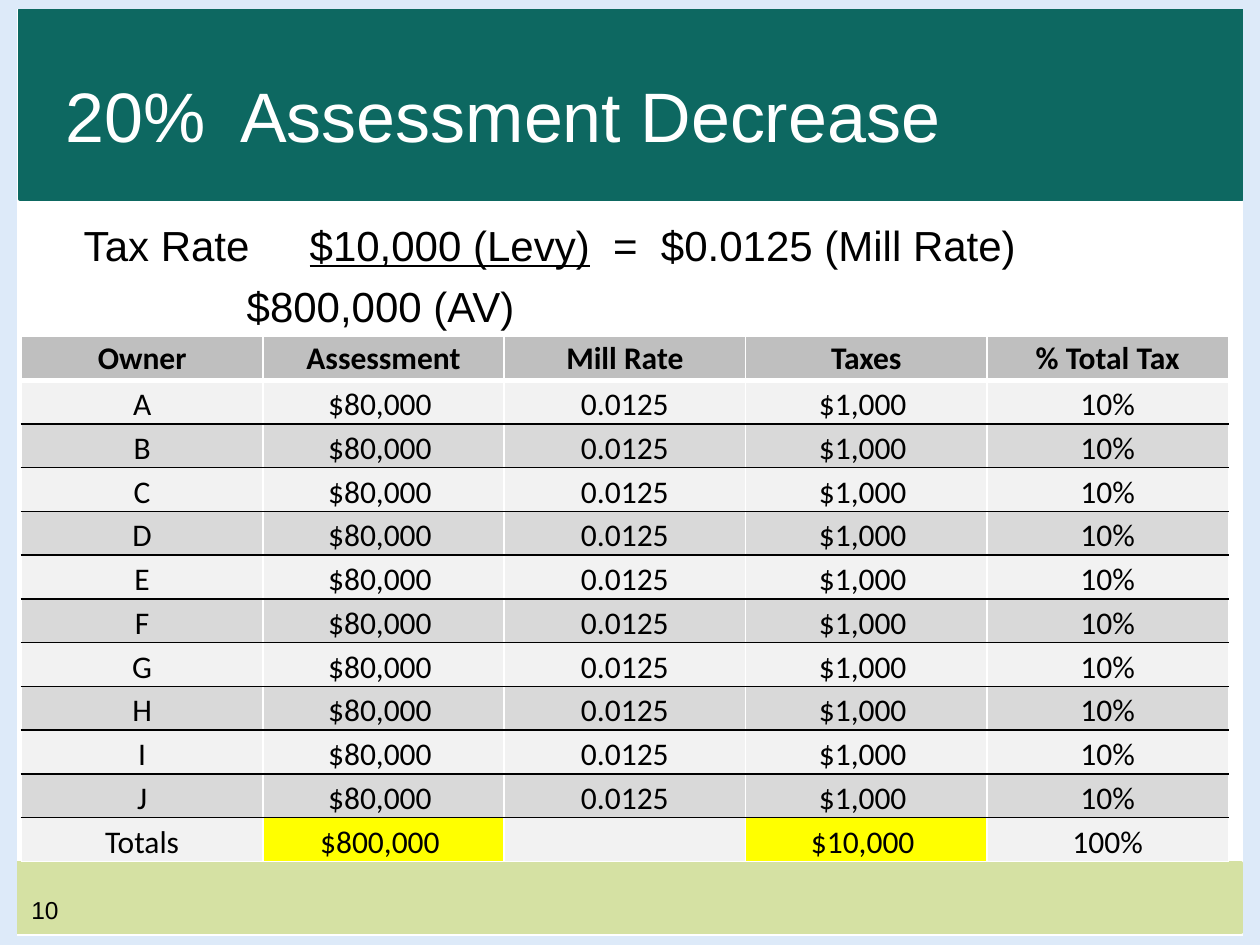
from lxml import etree
from pptx import Presentation
from pptx.dml.color import RGBColor
from pptx.enum.shapes import MSO_SHAPE
from pptx.enum.text import MSO_ANCHOR, PP_ALIGN
from pptx.oxml import parse_xml
from pptx.oxml.ns import nsdecls
from pptx.util import Inches, Pt

RECT = MSO_SHAPE.RECTANGLE
TOP, MIDDLE, BOTTOM = MSO_ANCHOR.TOP, MSO_ANCHOR.MIDDLE, MSO_ANCHOR.BOTTOM
CENTER = PP_ALIGN.CENTER

BLACK = RGBColor(0x00, 0x00, 0x00)
WHITE = RGBColor(0xFF, 0xFF, 0xFF)
TEAL = RGBColor(0x0D, 0x68, 0x61)
LIME = RGBColor(0xD5, 0xE1, 0xA3)
PALE_BLUE = RGBColor(0xDD, 0xEA, 0xF9)
HEADER_GRAY = RGBColor(0xBF, 0xBF, 0xBF)
LIGHT_GRAY = RGBColor(0xF2, 0xF2, 0xF2)
MID_GRAY = RGBColor(0xD9, 0xD9, 0xD9)
YELLOW = RGBColor(0xFF, 0xFF, 0x00)

BANDS = [
    (0.12, 6.85, 9.73, 0.55, LIME),
    (0.16, 0.08, 9.7, 1.5, TEAL),
    (0, 0, 10, 0.06, PALE_BLUE),
    (0, 0.06, 0.12, 7.41, PALE_BLUE),
    (9.88, 0.03, 0.12, 7.41, PALE_BLUE),
    (0, 7.44, 10, 0.06, PALE_BLUE),
]
HEADER = ["Owner", "Assessment", "Mill Rate", "Taxes", "% Total Tax"]
ROWS = [
    HEADER,
    *([owner, "$80,000 ", "0.0125", "$1,000 ", "10%"] for owner in "ABCDEFGHIJ"),
    ["Totals", "$800,000 ", "", "$10,000 ", "100%"],
]
TOTAL_COLUMNS = (1, 3)


def add_band(slide, left, top, width, height, color):
    sp = slide.shapes.add_shape(RECT, Inches(left), Inches(top), Inches(width), Inches(height))
    sp.shadow.inherit = False
    sp.fill.solid()
    sp.fill.fore_color.rgb = color
    sp.line.color.rgb = color
    sp.line.width = Pt(2)


def add_run(p, text, *, size, color=BLACK, font="Arial", bold=False, underline=False):
    r = p.add_run()
    r.text = text
    r.font.size = Pt(size)
    r.font.name = font
    r.font.bold = bold
    r.font.underline = underline
    r.font.color.rgb = color
    return r


def add_text_box(slide, left, top, width, height, anchor=TOP):
    box = slide.shapes.add_textbox(Inches(left), Inches(top), Inches(width), Inches(height))
    tf = box.text_frame
    tf.word_wrap = True
    tf.vertical_anchor = anchor
    return tf


def add_text_shadow(r):
    effects = parse_xml(
        f'<a:effectLst {nsdecls("a")}><a:outerShdw blurRad="38100" dist="38100" dir="2700000">'
        '<a:srgbClr val="000000"><a:alpha val="43000"/></a:srgbClr>'
        '</a:outerShdw></a:effectLst>')
    r.font.fill._xPr.find("{*}solidFill").addnext(effects)


def add_formula(slide):
    """Levy over assessed value, lined up on the default tab stops."""
    tf = add_text_box(slide, 0.48, 1.69, 9, 1)
    levy, value = tf.paragraphs[0], tf.add_paragraph()
    for p in (levy, value):
        p_pr = p._p.get_or_add_pPr()
        p_pr.set("marL", str(Inches(0.38)))
        p_pr.set("indent", str(-Inches(0.38)))
    value.space_before = Pt(6)
    add_run(levy, " Tax Rate\t", size=24)
    add_run(levy, "$10,000 (Levy)", size=24, underline=True)
    add_run(levy, "  =  $0.0125 (Mill Rate)", size=24)
    add_run(value, " \t\t\t$800,000 (AV)", size=24)


def set_borders(cell, top, bottom):
    """Top and bottom are (color, points); the sides are thin white lines."""
    tc_pr = cell._tc.get_or_add_tcPr()
    side = (WHITE, 1)
    edges = [("lnL", side), ("lnR", side), ("lnT", top), ("lnB", bottom)]
    for i, (tag, (color, points)) in enumerate(edges):
        ln = parse_xml(
            f'<a:{tag} {nsdecls("a")} w="{Pt(points)}"><a:solidFill>'
            f'<a:srgbClr val="{color}"/></a:solidFill></a:{tag}>')
        tc_pr.insert(i, ln)


def cell_fill(row, col):
    if row == 0:
        return HEADER_GRAY
    if row == len(ROWS) - 1 and col in TOTAL_COLUMNS:
        return YELLOW
    return LIGHT_GRAY if row % 2 else MID_GRAY


def row_rule(index):
    """The horizontal line above the row with this index."""
    if index in (0, len(ROWS)):
        return WHITE, 1
    return (WHITE, 3) if index == 1 else (BLACK, 1)


def add_tax_table(slide):
    frame = slide.shapes.add_table(len(ROWS), len(HEADER), Inches(0.17), Inches(2.67),
                                   Inches(9.58), Inches(4.17))
    table = frame.table
    for i, values in enumerate(ROWS):
        for j, text in enumerate(values):
            cell = table.cell(i, j)
            cell.fill.solid()
            cell.fill.fore_color.rgb = cell_fill(i, j)
            set_borders(cell, row_rule(i), row_rule(i + 1))
            cell.margin_left = cell.margin_right = cell.margin_top = Inches(0.01)
            cell.margin_bottom = 0
            cell.vertical_anchor = BOTTOM if i else MIDDLE
            p = cell.text_frame.paragraphs[0]
            p.alignment = CENTER
            if text:
                add_run(p, text, size=18, font="Calibri", bold=i == 0)


def main():
    prs = Presentation()
    prs.slide_width, prs.slide_height = Inches(10), Inches(7.5)
    slide = prs.slides.add_slide(prs.slide_layouts[6])
    for band in BANDS:
        add_band(slide, *band)
    number = add_text_box(slide, 0.15, 7.02, 2.33, 0.4, MIDDLE)
    add_run(number.paragraphs[0], "10", size=14)
    add_formula(slide)
    title = add_text_box(slide, 0.42, 0.28, 7.42, 1.25, MIDDLE)
    add_text_shadow(add_run(title.paragraphs[0], "20%  Assessment Decrease", size=40, color=WHITE))
    add_tax_table(slide)
    prs.save("out.pptx")


if __name__ == "__main__":
    main()
